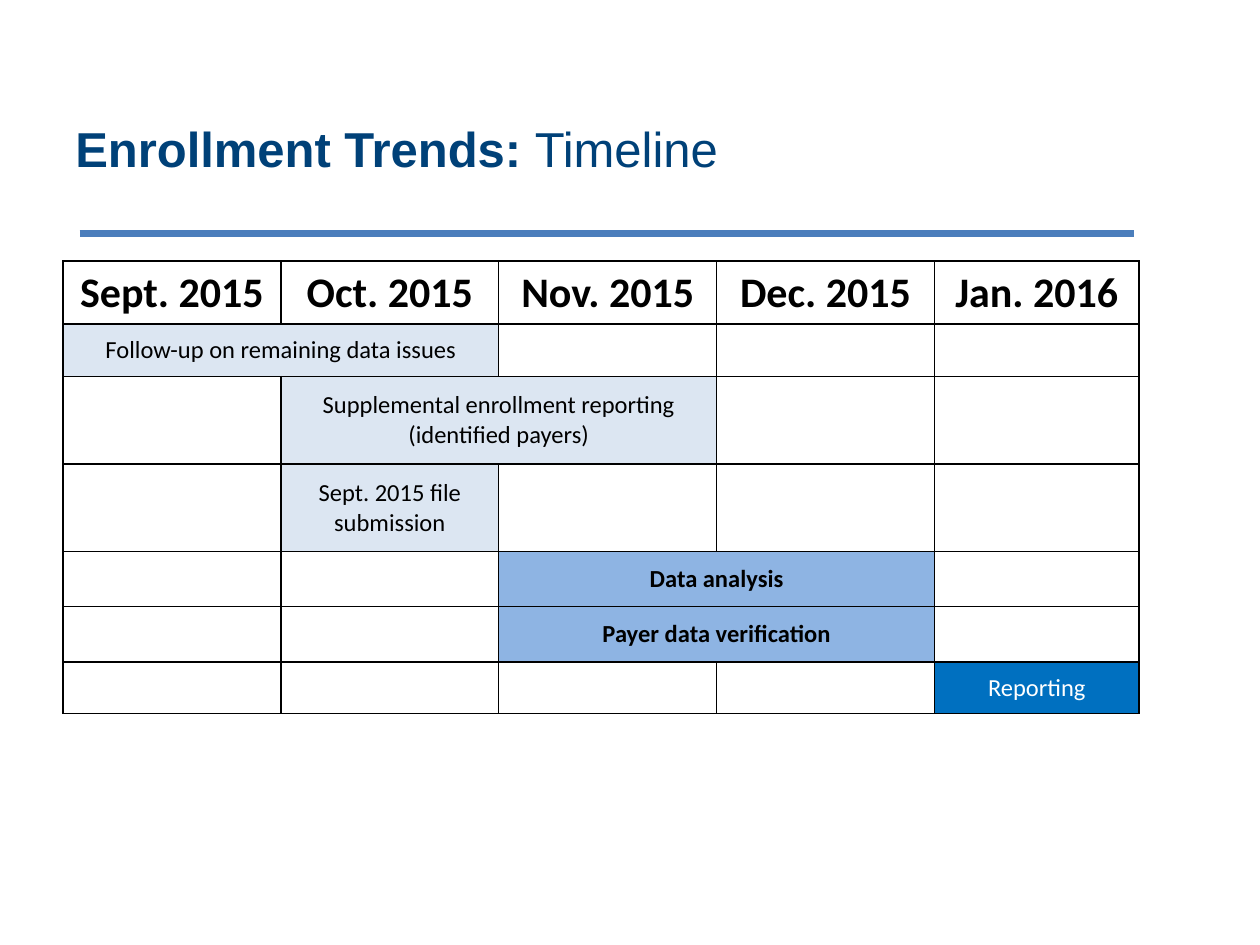
from lxml import etree
from pptx import Presentation, util as u
from pptx.dml.color import RGBColor
from pptx.enum import shapes, text
from pptx.oxml import ns, xmlchemy

NAVY = RGBColor(0x00, 0x41, 0x78)
RULE_BLUE = RGBColor(0x4B, 0x7E, 0xBC)
PALE_BLUE = RGBColor(0xDC, 0xE6, 0xF2)
MID_BLUE = RGBColor(0x8E, 0xB4, 0xE3)
DEEP_BLUE = RGBColor(0x00, 0x70, 0xC0)
BLACK = RGBColor(0, 0, 0)
WHITE = RGBColor(255, 255, 255)

MONTHS = ["Sept. 2015", "Oct. 2015", "Nov. 2015", "Dec. 2015", "Jan. 2016"]
COLUMN_WIDTHS = [124.5] * 4 + [117]
ROW_HEIGHTS = [36, 30, 50, 50, 31.5, 31.5, 29.5]

# One task per row: wording, first month, months covered, fill, text format
TASKS = [
    ("Follow-up on remaining data issues", 0, 2, PALE_BLUE, {}),
    ("Supplemental enrollment reporting (identified payers)", 1, 2, PALE_BLUE, {}),
    ("Sept. 2015 file submission", 1, 1, PALE_BLUE, {}),
    ("Data analysis", 2, 2, MID_BLUE, {"bold": True}),
    ("Payer data verification", 2, 2, MID_BLUE, {"bold": True}),
    ("Reporting", 4, 1, DEEP_BLUE, {"color": WHITE}),
]


def add_text(para, wording, font="Calibri", size=14, color=BLACK, bold=False):
    span = para.add_run()
    span.text = wording
    span.font.name = font
    span.font.size = u.Pt(size)
    span.font.color.rgb = color
    span.font.bold = bold


class TimelinePage:
    """Holds the border style and the slide being drawn."""

    def __init__(self, page, border_color=BLACK, border_width=1):
        self.page = page
        self.border_color = border_color
        self.border_width = border_width

    def title(self, left, top, width, height, *parts):
        box = self.page.shapes.add_textbox(
            u.Pt(left), u.Pt(top), u.Pt(width), u.Pt(height))
        frame = box.text_frame
        frame.word_wrap = True
        frame.vertical_anchor = text.MSO_ANCHOR.MIDDLE
        for wording, bold in parts:
            add_text(frame.paragraphs[0], wording, font="Arial", size=28,
                     color=NAVY, bold=bold)

    def rule(self, left, right, y, color, width):
        line = self.page.shapes.add_connector(
            shapes.MSO_CONNECTOR.STRAIGHT, u.Pt(left), u.Pt(y), u.Pt(right), u.Pt(y))
        line.line.color.rgb = color
        line.line.width = u.Pt(width)
        etree.SubElement(line._element.spPr, ns.qn("a:effectLst"))

    def table(self, left, top, widths, heights):
        frame = self.page.shapes.add_table(
            len(heights), len(widths), u.Pt(left), u.Pt(top),
            u.Pt(sum(widths)), u.Pt(sum(heights)))
        grid = frame.table
        grid.first_row = grid.horz_banding = False
        for column, width in zip(grid.columns, widths):
            column.width = u.Pt(width)
        for row, height in zip(grid.rows, heights):
            row.height = u.Pt(height)
        for cell in grid.iter_cells():
            self.borders(cell)
            cell.fill.background()
        return grid

    def borders(self, cell):
        properties = cell._tc.get_or_add_tcPr()
        for side in ("a:lnL", "a:lnR", "a:lnT", "a:lnB"):
            edge = etree.SubElement(properties, ns.qn(side),
                                    w=str(u.Pt(self.border_width)))
            fill = etree.SubElement(edge, ns.qn("a:solidFill"))
            etree.SubElement(fill, ns.qn("a:srgbClr"), val=str(self.border_color))

    def cell(self, cell, wording, fill=None, **style):
        cell.vertical_anchor = text.MSO_ANCHOR.MIDDLE
        para = cell.text_frame.paragraphs[0]
        para.alignment = text.PP_ALIGN.CENTER
        add_text(para, wording, **style)
        if fill is not None:
            cell.fill.solid()
            cell.fill.fore_color.rgb = fill


def main():
    deck = Presentation()
    deck.slide_width, deck.slide_height = u.Pt(720), u.Pt(540)
    timeline = TimelinePage(deck.slides.add_slide(deck.slide_layouts[6]))

    # Heading
    timeline.rule(45.5, 648, 133.5, RULE_BLUE, 4)
    timeline.title(36, 44.5, 612, 80, ("Enrollment Trends: ", True), ("Timeline", False))

    # Month headers
    grid = timeline.table(36, 149.25, COLUMN_WIDTHS, ROW_HEIGHTS)
    for column, month in enumerate(MONTHS):
        timeline.cell(grid.cell(0, column), month, size=24, bold=True)

    # Task bars
    for row, (task, first, months, fill, style) in enumerate(TASKS, start=1):
        start = grid.cell(row, first)
        if months > 1:
            start.merge(grid.cell(row, first + months - 1))
        timeline.cell(start, task, fill, **style)

    deck.save("out.pptx")


if __name__ == "__main__":
    main()
